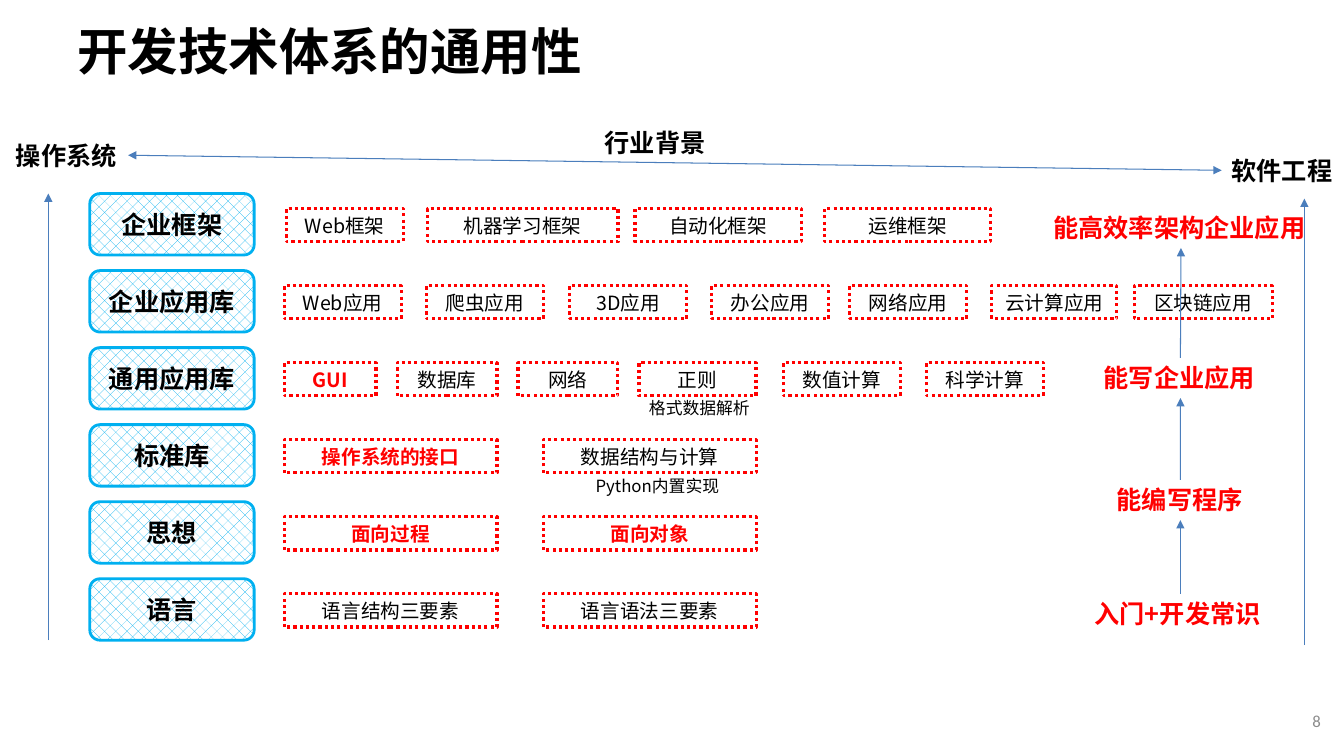
import pptx
import pptx.dml.color
import pptx.enum.dml
import pptx.enum.shapes
import pptx.enum.text
import pptx.oxml.ns
import pptx.util
from lxml import etree

FONT = "Noto Sans CJK SC"
BLACK, RED, CYAN, BLUE, GREY, WHITE = "000000", "FF0000", "00B0F0", "4B7EBC", "8C8C8C", "FFFFFF"
SHAPE = pptx.enum.shapes.MSO_SHAPE
ALIGN = pptx.enum.text.PP_ALIGN
ANCHOR = pptx.enum.text.MSO_ANCHOR
TOP, LEFT, BOTTOM, RIGHT = range(4)

# All lengths are percentages of the slide's width or height.
ROW_TOP, ROW_PITCH, LAYER_H, CHIP_H, LABEL_H = 25.6, 10.19, 8.13, 4.4, 5.33
COL_1, COL_2, WIDE, NARROW = 21.15, 40.43, 15.83, 8.7

# Each layer: name, then its chips as (text, left, width, highlighted).
LAYERS = [
    ("企业框架", [
        ("Web框架", 21.3, NARROW, False), ("机器学习框架", 31.8, 14.18, False),
        ("自动化框架", 47.25, 12.38, False), ("运维框架", 61.35, 12.38, False)]),
    ("企业应用库", [
        ("Web应用", COL_1, NARROW, False), ("爬虫应用", 31.73, NARROW, False),
        ("3D应用", 42.38, NARROW, False), ("办公应用", 52.95, NARROW, False),
        ("网络应用", 63.23, NARROW, False), ("云计算应用", 73.8, 9.3, False),
        ("区块链应用", 84.38, 10.28, False)]),
    ("通用应用库", [
        ("GUI", COL_1, 6.83, True), ("数据库", 29.55, 7.43, False),
        ("网络", 38.55, 7.43, False), ("正则", 47.55, NARROW, False),
        ("数值计算", 58.28, NARROW, False), ("科学计算", 68.93, NARROW, False)]),
    ("标准库", [
        ("操作系统的接口", COL_1, WIDE, True), ("数据结构与计算", COL_2, WIDE, False)]),
    ("思想", [
        ("面向过程", COL_1, WIDE, True), ("面向对象", COL_2, WIDE, True)]),
    ("语言", [
        ("语言结构三要素", COL_1, WIDE, False), ("语言语法三要素", COL_2, WIDE, False)]),
]

# Skill levels from the lowest up: text, left, top, width, wrap.
SKILLS = [
    ("入门+开发常识", 80.7, 78.53, 14.25, True),
    ("能编写程序", 82.35, 63.47, 10.95, False),
    ("能写企业应用", 81.38, 47.33, 12.9, False),
    ("能高效率架构企业应用", 77.63, 27.47, 20.48, False),
]


def rgb(value):
    return pptx.dml.color.RGBColor.from_string(value)


class Deck:
    def __init__(self, prs):
        self.prs = prs
        self.s = prs.slides.add_slide(prs.slide_layouts[6])

    def x(self, share):
        return round(self.prs.slide_width * share / 100)

    def y(self, share):
        return round(self.prs.slide_height * share / 100)

    def box(self, left, top, width, height):
        return self.x(left), self.y(top), self.x(width), self.y(height)

    def set_text(self, sp, text, size, color, bold, align, anchor, wrap=True, font=FONT):
        tf = sp.text_frame
        tf.word_wrap = wrap
        tf.vertical_anchor = anchor
        p = tf.paragraphs[0]
        p.text = text
        p.alignment = align
        p.font.name = font
        p.font.size = pptx.util.Pt(size)
        p.font.bold = bold
        p.font.color.rgb = rgb(color)
        # East Asian characters take their typeface from a:ea
        defaults = p.font._element
        etree.SubElement(defaults, pptx.oxml.ns.qn("a:ea"), typeface=font)

    def text(self, text, left, top, width, height=LABEL_H, size=18, color=BLACK, bold=True,
             align=ALIGN.LEFT, anchor=ANCHOR.TOP, wrap=False, font=FONT):
        sp = self.s.shapes.add_textbox(*self.box(left, top, width, height))
        self.set_text(sp, text, size, color, bold, align, anchor, wrap, font)
        return sp

    def shape(self, kind, box, line, weight):
        sp = self.s.shapes.add_shape(kind, *self.box(*box))
        sp.shadow.inherit = False
        sp.line.color.rgb = rgb(line)
        sp.line.width = pptx.util.Pt(weight)
        return sp

    def layer(self, text, top):
        sp = self.shape(SHAPE.ROUNDED_RECTANGLE, (6.68, top, 12.23, LAYER_H), CYAN, 2)
        sp.fill.patterned()
        sp.fill.pattern = pptx.enum.dml.MSO_PATTERN.PERCENT_25
        sp.fill.fore_color.rgb = rgb(CYAN)
        sp.fill.back_color.rgb = rgb(WHITE)
        self.set_text(sp, text, 18, BLACK, True, ALIGN.CENTER, ANCHOR.MIDDLE)

    def chip(self, text, left, top, width, highlighted):
        sp = self.shape(SHAPE.RECTANGLE, (left, top, width, CHIP_H), RED, 2.25)
        sp.fill.background()
        sp.line.dash_style = pptx.enum.dml.MSO_LINE.ROUND_DOT
        self.set_text(sp, text, 14, RED if highlighted else BLACK, highlighted,
                      ALIGN.CENTER, ANCHOR.MIDDLE)

    def arrow(self, x1, y1, x2, y2, ends=("tailEnd",)):
        line = self.s.shapes.add_connector(
            pptx.enum.shapes.MSO_CONNECTOR.STRAIGHT,
            self.x(x1), self.y(y1), self.x(x2), self.y(y2))
        line.line.color.rgb = rgb(BLUE)
        line.line.width = pptx.util.Pt(0.75)
        qn = pptx.oxml.ns.qn
        ln = line._element.spPr.find(qn("a:ln"))
        for end in ends:
            etree.SubElement(ln, qn("a:" + end), type="triangle")
        etree.SubElement(line._element.spPr, qn("a:effectLst"))
        return line

    def join(self, start, start_side, end, end_side, ends=("tailEnd",)):
        """Draw an arrow between the side middles of two boxes."""
        line = self.arrow(0, 0, 0, 0, ends)
        line.begin_connect(start, start_side)
        line.end_connect(end, end_side)


def main():
    prs = pptx.Presentation()
    prs.slide_width = pptx.util.Inches(13.33)
    prs.slide_height = pptx.util.Inches(7.5)
    deck = Deck(prs)

    deck.text("开发技术体系的通用性", 5.03, 2.4, 58.65, 8.53, size=36,
              anchor=ANCHOR.MIDDLE, wrap=True)
    deck.text("8", 75.68, 92.67, 23.33, size=12, color=GREY, bold=False,
              align=ALIGN.RIGHT, anchor=ANCHOR.MIDDLE, wrap=True, font="Calibri")

    for i, (name, chips) in enumerate(LAYERS):
        top = ROW_TOP + i * ROW_PITCH
        deck.layer(name, top)
        for text, left, width, highlighted in chips:
            deck.chip(text, left, top + 2, width, highlighted)

    deck.text("格式数据解析", 47.55, 52, 9.08, 4, size=12, bold=False)
    deck.text("Python内置实现", 43.58, 62.27, 10.88, 4, size=12, bold=False, wrap=True)

    skills = [deck.text(text, left, top, width, color=RED, wrap=wrap)
              for text, left, top, width, wrap in SKILLS]
    for lower, upper in zip(skills, skills[1:]):
        deck.join(lower, TOP, upper, BOTTOM)

    system = deck.text("操作系统", 0.45, 17.87, 9.08)
    engineering = deck.text("软件工程", 90.9, 19.87, 9.08)
    deck.text("行业背景", 44.25, 16.13, 9.08)
    deck.join(system, RIGHT, engineering, LEFT, ("headEnd", "tailEnd"))
    deck.arrow(3.6, 84.67, 3.6, 25.6)
    deck.arrow(97.05, 85.33, 97.05, 26.27)

    prs.save("out.pptx")


if __name__ == "__main__":
    main()
